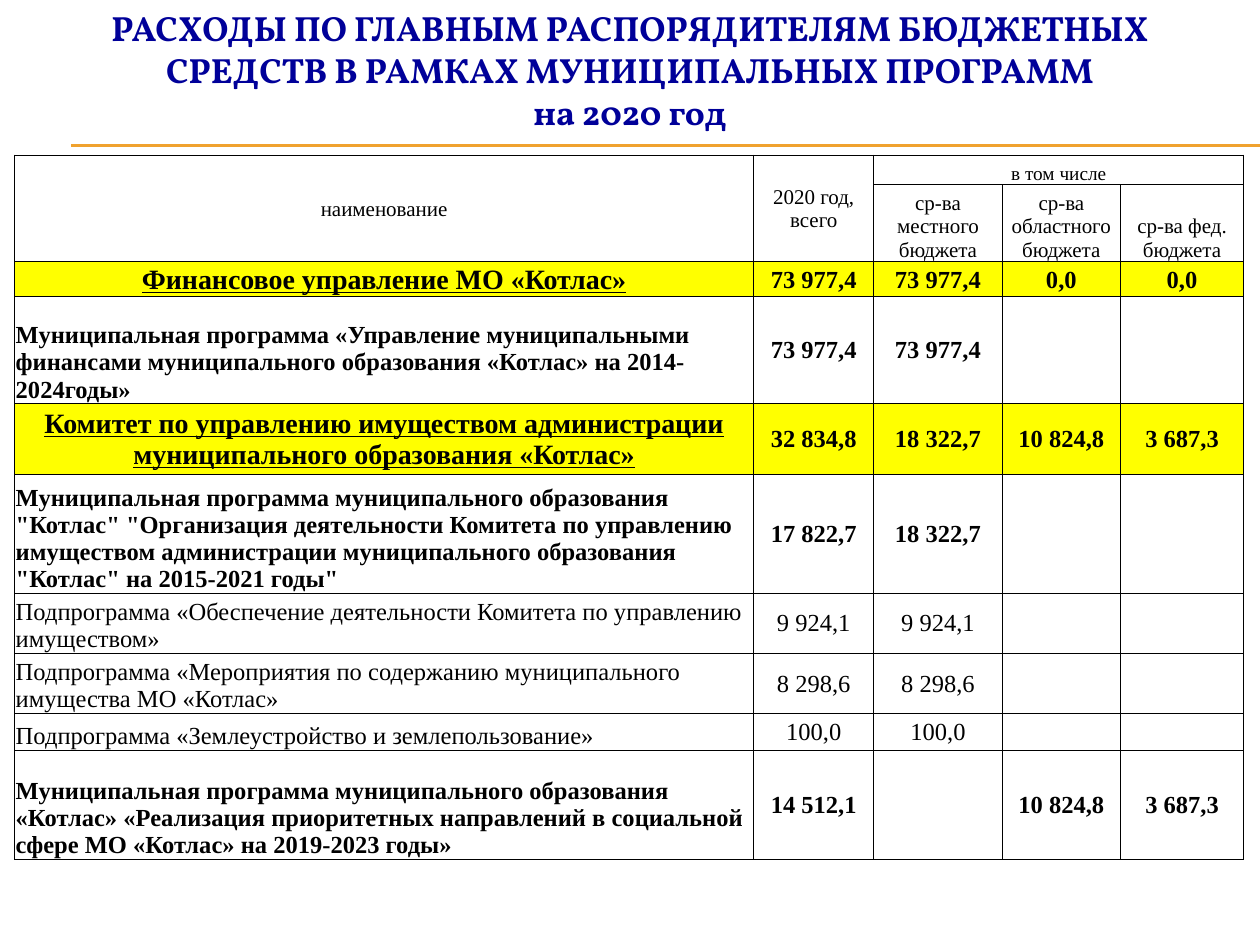
from pptx import Presentation
from pptx.dml.color import RGBColor
from pptx.enum.shapes import MSO_CONNECTOR as Connector
from pptx.enum.text import MSO_ANCHOR as Anchor, MSO_AUTO_SIZE as AutoSize, PP_ALIGN as Align
from pptx.oxml.xmlchemy import OxmlElement
from pptx.util import Pt

COLORS = {"title": "000099", "rule": "F0A22E", "text": "000000", "border": "000000",
          "plain": "FFFFFF", "department": "FFFF00"}
TABLE_FONT, TITLE_FONT = "Times New Roman", "Vollkorn"
TITLE = ("РАСХОДЫ ПО ГЛАВНЫМ РАСПОРЯДИТЕЛЯМ БЮДЖЕТНЫХ СРЕДСТВ "
         "В РАМКАХ МУНИЦИПАЛЬНЫХ ПРОГРАММ\vна 2020 год")
RULE_TOPS = [82.8, 83.5]
COLUMN_WIDTHS = [422.5, 68.5, 73.5, 67.5, 70.5]
HEADER_HEIGHTS = [17, 44]

# row, column, last row, last column, text, size, anchor
HEADERS = [
    (0, 0, 1, 0, "наименование", 12, Anchor.MIDDLE),
    (0, 1, 1, 1, "2020 год,\vвсего", 12, Anchor.MIDDLE),
    (0, 2, 0, 4, "в том числе", 11, Anchor.BOTTOM),
    (1, 2, 1, 2, "ср-ва местного бюджета", 12, Anchor.BOTTOM),
    (1, 3, 1, 3, "ср-ва областного бюджета", 12, Anchor.BOTTOM),
    (1, 4, 1, 4, "ср-ва фед. бюджета", 12, Anchor.BOTTOM),
]
EXPENSES = [
    ("department", 19.5, "Финансовое управление МО «Котлас»",
     ["73 977,4", "73 977,4", "0,0", "0,0"]),
    ("program", 61, "Муниципальная программа «Управление муниципальными финансами "
     "муниципального образования «Котлас» на 2014-2024годы»",
     ["73 977,4", "73 977,4", "", ""]),
    ("department", 40.5, "Комитет по управлению имуществом администрации "
     "муниципального образования «Котлас»",
     ["32 834,8", "18 322,7", "10 824,8", "3 687,3"]),
    ("program", 67.5, 'Муниципальная программа муниципального образования "Котлас" '
     '"Организация деятельности Комитета по управлению имуществом администрации '
     'муниципального образования "Котлас" на 2015-2021 годы"',
     ["17 822,7", "18 322,7", "", ""]),
    ("subprogram", 34, "Подпрограмма «Обеспечение деятельности Комитета по управлению "
     "имуществом»", ["9 924,1", "9 924,1", "", ""]),
    ("subprogram", 34, "Подпрограмма «Мероприятия по содержанию муниципального "
     "имущества МО «Котлас»", ["8 298,6", "8 298,6", "", ""]),
    ("subprogram", 21, "Подпрограмма «Землеустройство и землепользование»",
     ["100,0", "100,0", "", ""]),
    ("program", 62.5, "Муниципальная программа муниципального образования «Котлас» "
     "«Реализация приоритетных направлений в социальной сфере МО «Котлас» "
     "на 2019-2023 годы»", ["14 512,1", "", "10 824,8", "3 687,3"]),
]


def color(name):
    return RGBColor.from_string(COLORS[name])


def style_paragraphs(frame, name, size, ink, bold=False, underline=False, align=Align.CENTER):
    for paragraph in frame.paragraphs:
        paragraph.alignment = align
        font = paragraph.font
        font.name, font.size, font.bold, font.underline = name, Pt(size), bold, underline
        font.color.rgb = color(ink)


def add_borders(cell):
    properties = cell._tc.get_or_add_tcPr()
    for index, tag in enumerate(["a:lnL", "a:lnR", "a:lnT", "a:lnB"]):
        line = OxmlElement(tag)
        line.set("w", str(Pt(0.5)))
        fill = OxmlElement("a:solidFill")
        ink = OxmlElement("a:srgbClr")
        ink.set("val", COLORS["border"])
        fill.append(ink)
        line.append(fill)
        properties.insert(index, line)


def fill_cell(cell, text, size, anchor=Anchor.MIDDLE, **style):
    cell.text = text
    cell.vertical_anchor = anchor
    style_paragraphs(cell.text_frame, TABLE_FONT, size, "text", **style)


def add_title(slide):
    title = slide.shapes.title
    title.left, title.top, title.width, title.height = Pt(25.5), Pt(0), Pt(669), Pt(79)
    frame = title.text_frame
    frame.text = TITLE
    frame.word_wrap = True
    frame.auto_size = AutoSize.SHAPE_TO_FIT_TEXT
    frame.vertical_anchor = Anchor.TOP
    style_paragraphs(frame, TITLE_FONT, 20, "title", bold=True)


def add_rules(slide):
    for top in RULE_TOPS:
        rule = slide.shapes.add_connector(Connector.STRAIGHT, Pt(40.5), Pt(top), Pt(720), Pt(top))
        rule.line.color.rgb = color("rule")
        rule.line.width = Pt(0.75)
        rule._element.spPr.append(OxmlElement("a:effectLst"))


def add_expense_table(slide):
    heights = HEADER_HEIGHTS + [height for _, height, _, _ in EXPENSES]
    table = slide.shapes.add_table(
        len(heights), len(COLUMN_WIDTHS), Pt(8.3), Pt(88.6),
        Pt(sum(COLUMN_WIDTHS)), Pt(sum(heights))).table
    table.first_row = table.horz_banding = False
    for column, width in zip(table.columns, COLUMN_WIDTHS):
        column.width = Pt(width)
    for row, height in zip(table.rows, heights):
        row.height = Pt(height)
    for cell in table.iter_cells():
        cell.margin_left = cell.margin_right = cell.margin_top = Pt(0.7)
        cell.margin_bottom = Pt(0)
        cell.fill.solid()
        cell.fill.fore_color.rgb = color("plain")
        add_borders(cell)

    for row, column, last_row, last_column, text, size, anchor in HEADERS:
        cell = table.cell(row, column)
        if (row, column) != (last_row, last_column):
            cell.merge(table.cell(last_row, last_column))
        fill_cell(cell, text, size, anchor)

    for row, (kind, _, name, values) in enumerate(EXPENSES, len(HEADER_HEIGHTS)):
        bold = kind != "subprogram"
        if kind == "department":
            fill_cell(table.cell(row, 0), name, 16, bold=True, underline=True)
            for column in range(len(COLUMN_WIDTHS)):
                table.cell(row, column).fill.fore_color.rgb = color("department")
        else:
            fill_cell(table.cell(row, 0), name, 14, Anchor.BOTTOM, bold=bold, align=Align.LEFT)
        for column, value in enumerate(values, 1):
            fill_cell(table.cell(row, column), value, 14, bold=bold)


def main():
    """Build the slide of budget spending by main administrator."""
    presentation = Presentation()
    presentation.slide_width, presentation.slide_height = Pt(720), Pt(540)
    slide = presentation.slides.add_slide(presentation.slide_layouts[5])
    add_rules(slide)
    add_expense_table(slide)
    add_title(slide)
    presentation.save("out.pptx")


if __name__ == "__main__":
    main()
